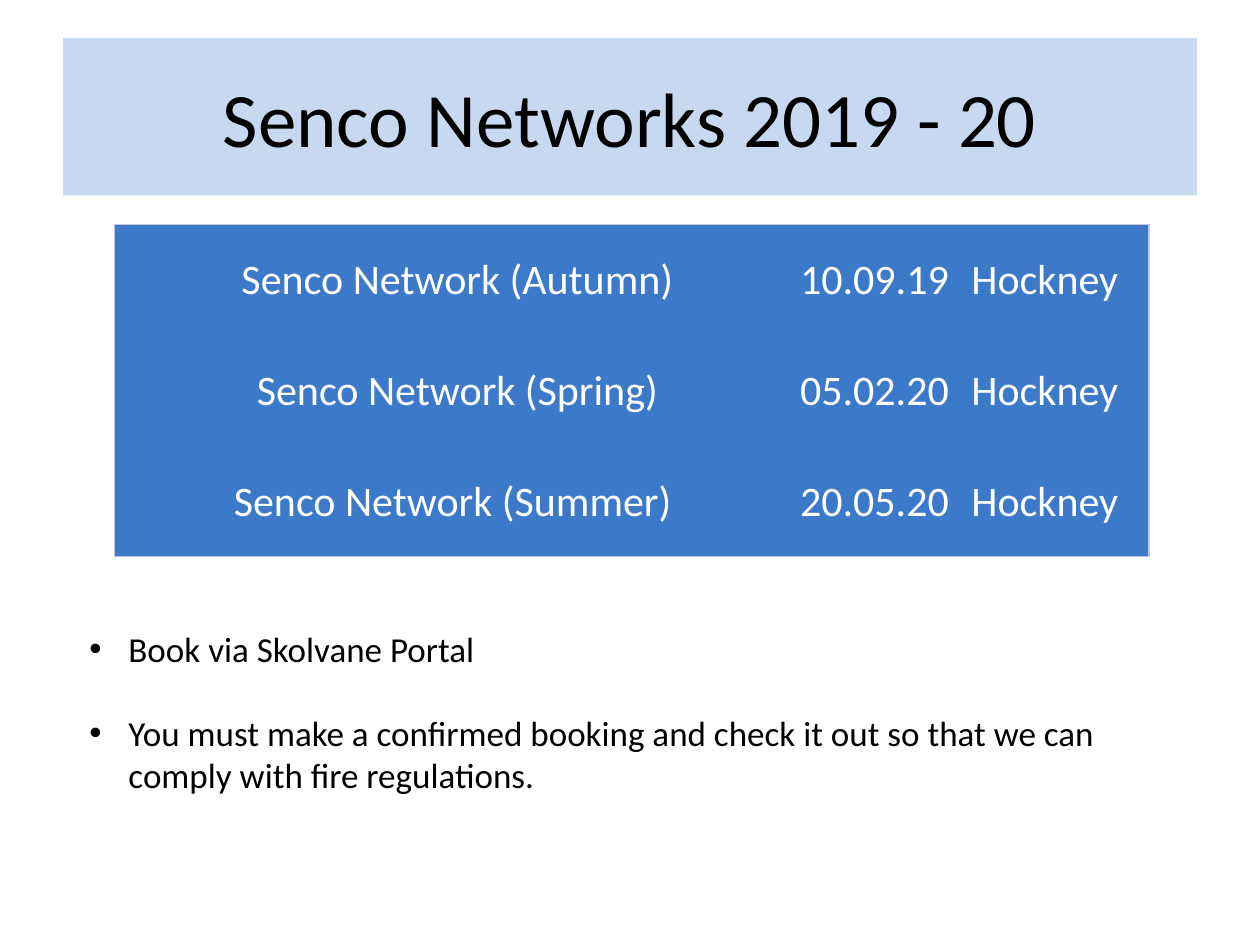
import dataclasses
import typing

import lxml.etree
import pptx
import pptx.dml.color
import pptx.enum.text
import pptx.oxml.ns
import pptx.util

Inches = pptx.util.Inches
Pt = pptx.util.Pt
ALIGN = pptx.enum.text.PP_ALIGN
MIDDLE = pptx.enum.text.MSO_ANCHOR.MIDDLE
EDGE = "BDC8DD"


@dataclasses.dataclass
class Event:
    name: str
    date: str
    room: str


EVENTS = [
    Event("Senco Network (Autumn)", "10.09.19", "Hockney"),
    Event("Senco Network (Spring)", "05.02.20", "Hockney"),
    Event("Senco Network (Summer) ", "20.05.20", "Hockney"),
]
NOTES = [
    "Book via Skolvane Portal",
    "You must make a confirmed booking and check it out so that we can "
    "comply with fire regulations.",
]


def color(code: str) -> pptx.dml.color.RGBColor:
    return pptx.dml.color.RGBColor.from_string(code)


def child(node: typing.Any, tag: str, **attrs: str) -> typing.Any:
    return lxml.etree.SubElement(node, pptx.oxml.ns.qn(tag), attrs)


def write(para: typing.Any, text: str, *, size: float, ink: str = "000000",
          align: typing.Any = ALIGN.LEFT, gap: float = 0, bullet: str = "") -> None:
    if bullet:
        props = para._p.get_or_add_pPr()
        indent = Inches(0.31)
        props.set("marL", str(indent))
        props.set("indent", str(-indent))
        child(props, "a:buFont", typeface="Arial")
        child(props, "a:buChar", char=bullet)
    para.alignment = align
    para.space_before = Pt(gap)
    run = para.add_run()
    run.text = text
    run.font.name = "Calibri"
    run.font.size = Pt(size)
    run.font.color.rgb = color(ink)


def place(shape: typing.Any, left: float, top: float, width: float, height: float) -> None:
    shape.left, shape.top = Inches(left), Inches(top)
    shape.width, shape.height = Inches(width), Inches(height)


def border(cell: typing.Any, sides: dict[str, bool]) -> None:
    props = cell._tc.get_or_add_tcPr()
    for side, shown in sides.items():
        line = child(props, f"a:ln{side}", w=str(Pt(0.75)))
        if shown:
            child(child(line, "a:solidFill"), "a:srgbClr", val=EDGE)
        else:
            child(line, "a:noFill")


def draw(slide: typing.Any, events: list[Event]) -> None:
    widths = [5.44, 1.36, 1.41]
    height = 0.88
    frame = slide.shapes.add_table(
        len(events), len(widths), Inches(0.91), Inches(1.78),
        Inches(sum(widths)), Inches(height * len(events)))
    table = frame.table
    table.first_row = table.horz_banding = False
    for col, width in zip(table.columns, widths):
        col.width = Inches(width)
    for i, event in enumerate(events):
        table.rows[i].height = Inches(height)
        for j, text in enumerate(dataclasses.astuple(event)):
            cell = table.cell(i, j)
            border(cell, {"L": j == 0, "R": j == len(widths) - 1,
                          "T": i == 0, "B": i == len(events) - 1})
            cell.fill.solid()
            cell.fill.fore_color.rgb = color("3C7AC9")
            cell.vertical_anchor = MIDDLE
            cell.margin_left = cell.margin_right = cell.margin_bottom = 0
            cell.margin_top = Inches(0.01)
            write(cell.text_frame.paragraphs[0], text, size=24, ink="FFFFFF",
                  align=ALIGN.LEFT if j else ALIGN.CENTER)


def main() -> None:
    deck = pptx.Presentation()
    deck.slide_width, deck.slide_height = Inches(10), Inches(7.5)
    slide = deck.slides.add_slide(deck.slide_layouts[1])

    title = slide.shapes.title
    place(title, 0.5, 0.3, 9, 1.25)
    title.fill.solid()
    title.fill.fore_color.rgb = color("C6D9F1")
    title.text_frame.vertical_anchor = MIDDLE
    write(title.text_frame.paragraphs[0], "Senco Networks 2019 - 20",
          size=44, align=ALIGN.CENTER)

    draw(slide, EVENTS)

    body = slide.placeholders[1]
    place(body, 0.61, 4.93, 8.41, 1.45)
    frame = body.text_frame
    frame.auto_size = pptx.enum.text.MSO_AUTO_SIZE.NONE
    for i, note in enumerate(NOTES):
        para = frame.add_paragraph() if i else frame.paragraphs[0]
        write(para, note, size=20, gap=24 if i else 0, bullet="•")

    deck.save("out.pptx")


if __name__ == "__main__":
    main()
